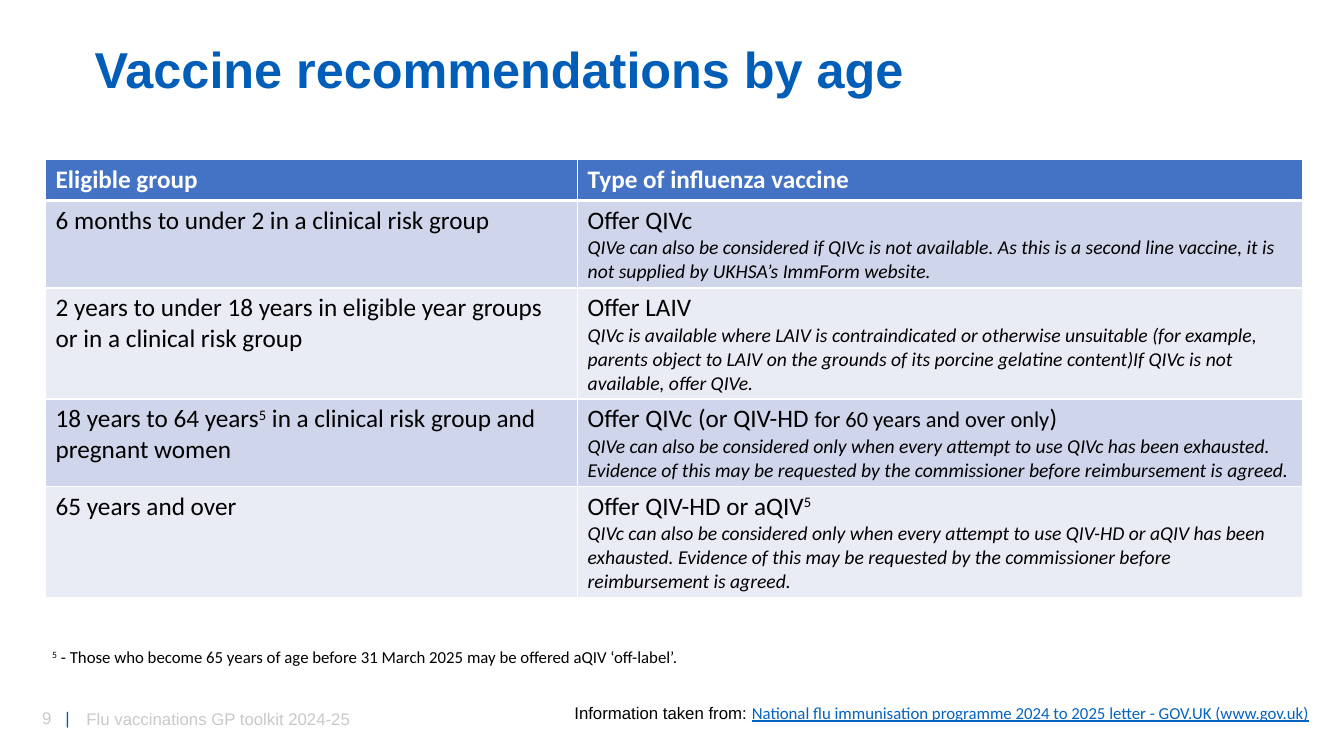
import pptx
import pptx.util
import pptx.dml.color
import pptx.enum.text
import pptx.oxml.ns
import lxml.etree

Pt = pptx.util.Pt
rgb = pptx.dml.color.RGBColor.from_string
qn = pptx.oxml.ns.qn

BLUE, GREY, BLACK, WHITE = "005EB8", "C9C9C9", "000000", "FFFFFF"


def add_runs(p, font, runs):
    for text, size, color, style in runs:
        r = p.add_run()
        r.text = text
        r.font.name = font
        r.font.size = Pt(size)
        r.font.color.rgb = rgb(color)
        r.font.bold = style == "bold"
        r.font.italic = style == "italic"
        if style == "underline":
            r.font.underline = True
        if style == "super":
            r.font._element.set("baseline", "30000")


def add_text(left, top, width, height, font, runs, middle=False):
    tf = s.shapes.add_textbox(Pt(left), Pt(top), Pt(width), Pt(height)).text_frame
    tf.word_wrap = True
    if middle:
        tf.vertical_anchor = pptx.enum.text.MSO_ANCHOR.MIDDLE
    p = tf.paragraphs[0]
    add_runs(p, font, runs)
    return p


prs = pptx.Presentation()
prs.slide_width, prs.slide_height = Pt(960), Pt(540)
s = prs.slides.add_slide(prs.slide_layouts[6])

p = add_text(60.5, 27.4, 838, 48.2, "Arial",
             [("Vaccine recommendations by age", 36, BLUE, "bold")], True)
p.line_spacing = 0.9

p = add_text(23, 501.8, 51, 21.6, "Arial", [("9\t", 12, GREY, ""), ("|", 12, BLUE, "")])
tabs = lxml.etree.SubElement(p._p.get_or_add_pPr(), qn("a:tabLst"))
lxml.etree.SubElement(tabs, qn("a:tab"), pos=str(Pt(16.7)), algn="l")

add_text(54.7, 499, 450.7, 28.8, "Arial",
         [("Flu vaccinations GP toolkit 2024-25", 12, GREY, "")], True)

p = add_text(403.2, 498.2, 548.6, 21.6, "Arial",
             [("Information taken from: ", 12, BLACK, "")])
add_runs(p, "Calibri", [
    ("National flu immunisation programme 2024 to 2025 letter - GOV.UK (www.gov.uk)",
     12, "0563C1", "underline")])

add_text(30.2, 458.7, 920.9, 22, "Calibri", [
    ("5", 12, BLACK, "super"),
    (" - Those who become 65 years of age before 31 March 2025 may be offered aQIV ‘off-label’.",
     12, BLACK, "")])

header = [
    ([("Eligible group", 18, WHITE, "bold")], ""),
    ([("Type of influenza vaccine", 18, WHITE, "bold")], ""),
]
under_2 = [
    ([("6 months to under 2 in a clinical risk group", 18, BLACK, "")], ""),
    ([("Offer QIVc", 18, BLACK, "")],
     "QIVe can also be considered if QIVc is not available. As this is a second line "
     "vaccine, it is not supplied by UKHSA’s ImmForm website."),
]
under_18 = [
    ([("2 years to under 18 years in eligible year groups or in a clinical risk group",
       18, BLACK, "")], ""),
    ([("Offer LAIV", 18, BLACK, "")],
     "QIVc is available where LAIV is contraindicated or otherwise unsuitable (for example, "
     "parents object to LAIV on the grounds of its porcine gelatine content)If QIVc is not "
     "available, offer QIVe."),
]
under_65 = [
    ([("18 years to 64 years", 18, BLACK, ""), ("5", 18, BLACK, "super"),
      (" in a clinical risk group and pregnant women", 18, BLACK, "")], ""),
    ([("Offer QIVc (or QIV-HD ", 18, BLACK, ""),
      ("for 60 years and over only", 16, BLACK, ""), (")", 18, BLACK, "")],
     "QIVe can also be considered only when every attempt to use QIVc has been exhausted. "
     "Evidence of this may be requested by the commissioner before reimbursement is agreed."),
]
over_65 = [
    ([("65 years and over", 18, BLACK, "")], ""),
    ([("Offer QIV-HD or aQIV", 18, BLACK, ""), ("5", 18, BLACK, "super")],
     "QIVc can also be considered only when every attempt to use QIV-HD or aQIV has been "
     "exhausted. Evidence of this may be requested by the commissioner before "
     "reimbursement is agreed."),
]
rows = [header, under_2, under_18, under_65, over_65]
heights = [29.2, 62.3, 79.3, 62.3, 79.3]
fills = ["4472C4", "CFD5EA", "E9EBF5", "CFD5EA", "E9EBF5"]

table = s.shapes.add_table(5, 2, Pt(32.6), Pt(114), Pt(897.6), Pt(sum(heights))).table
table.columns[0].width, table.columns[1].width = Pt(380), Pt(517.6)

for i, row in enumerate(rows):
    table.rows[i].height = Pt(heights[i])
    for j, (group, note) in enumerate(row):
        cell = table.cell(i, j)
        tf = cell.text_frame
        add_runs(tf.paragraphs[0], "Calibri", group)
        if note:
            add_runs(tf.add_paragraph(), "Calibri", [(note, 14, BLACK, "italic")])
        tcPr = cell._tc.get_or_add_tcPr()
        for side in "LRTB":
            thick = (i, side) in [(0, "B"), (1, "T")]
            ln = lxml.etree.SubElement(tcPr, qn("a:ln" + side), w=str(Pt(3 if thick else 1)))
            fill = lxml.etree.SubElement(ln, qn("a:solidFill"))
            lxml.etree.SubElement(fill, qn("a:srgbClr"), val=WHITE)
        cell.fill.solid()
        cell.fill.fore_color.rgb = rgb(fills[i])

prs.save("out.pptx")
